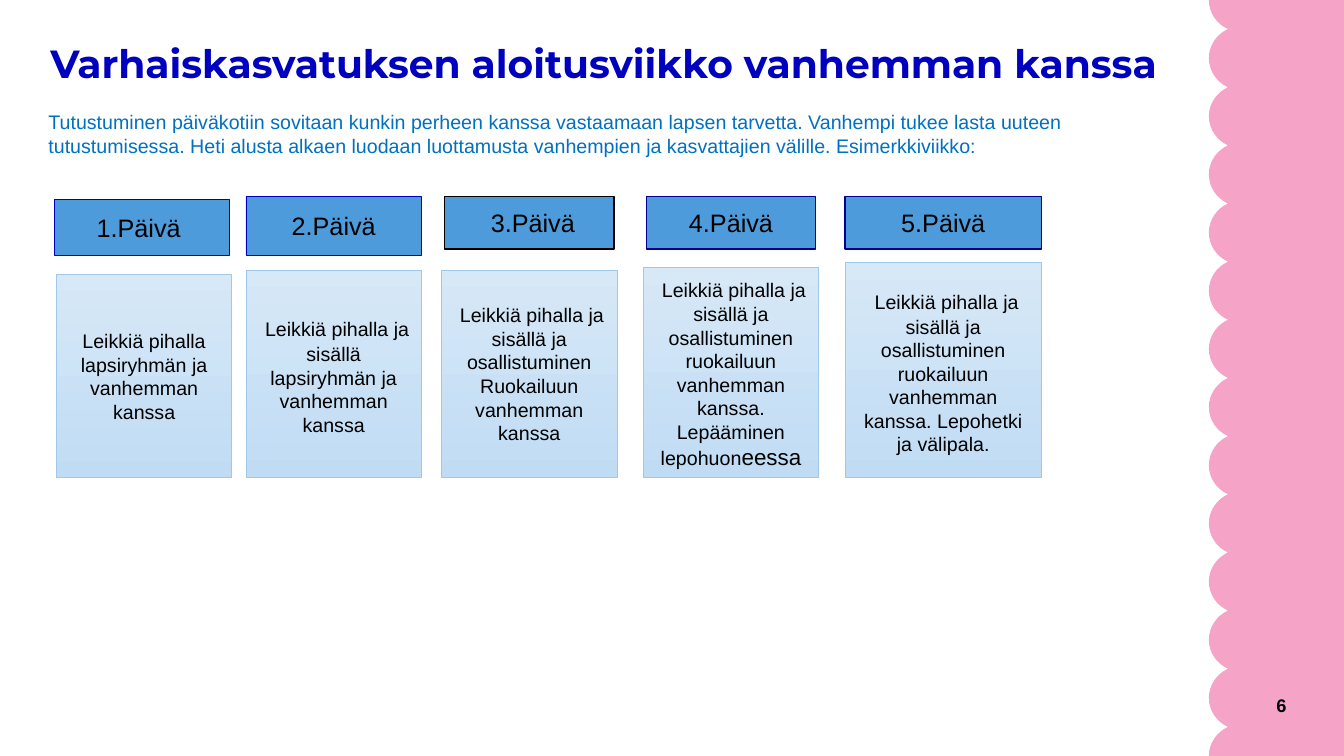
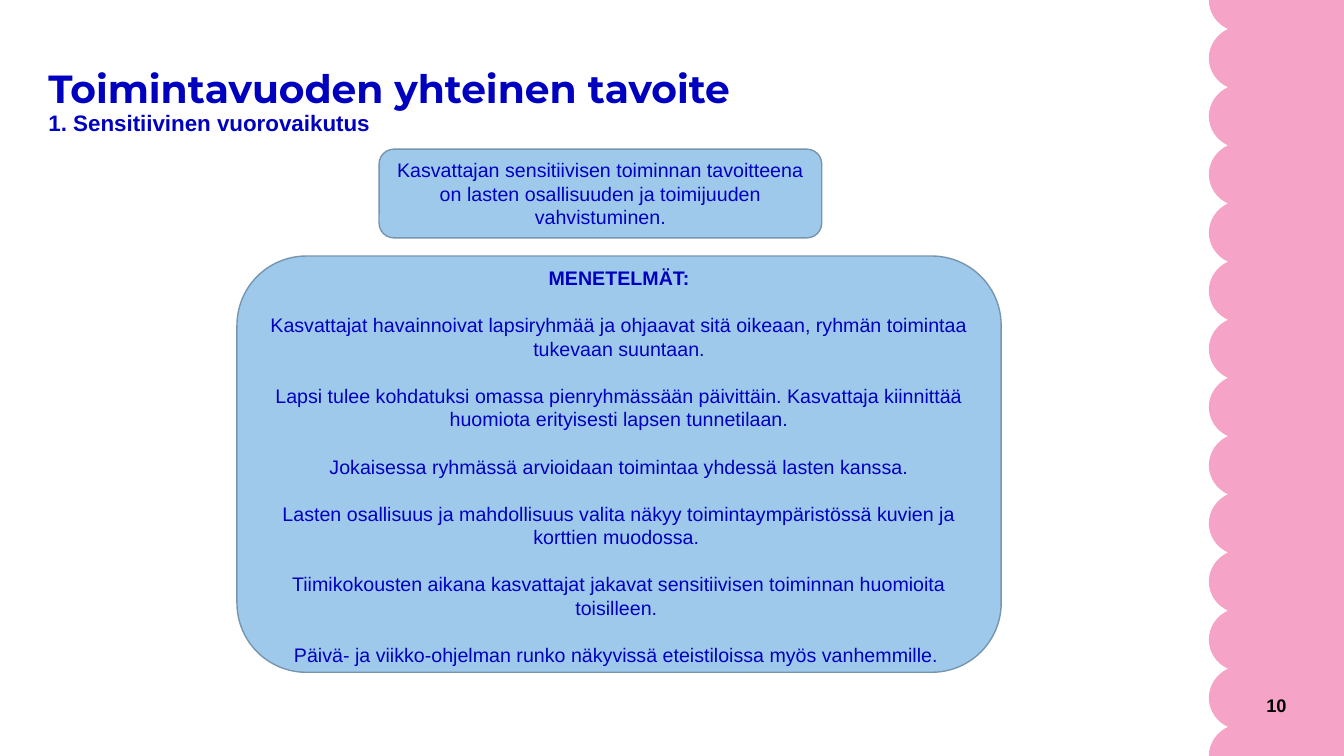
from lxml import etree
from pptx import Presentation
from pptx.dml.color import RGBColor
from pptx.enum.shapes import MSO_SHAPE
from pptx.enum.text import MSO_ANCHOR, MSO_AUTO_SIZE, PP_ALIGN
from pptx.oxml.ns import qn
from pptx.util import Inches, Pt

PINK, NAVY, BLUE = "F5A4C7", "0000BF", "0070C0"
DAY_BLUE, PALE_BLUE, BLACK = "4D9BDA", "9FC9EB", "000000"
TITLE = dict(name="Montserrat", size=Pt(28), bold=True)
BODY = dict(name="Arial", size=Pt(14), bold=False)
BODY_16 = dict(BODY, size=Pt(16))
BODY_18 = dict(BODY, size=Pt(18))
NO_INSETS = dict(margin_left=0, margin_top=0, margin_right=0, margin_bottom=0)


def rgb(value):
    return RGBColor.from_string(value)


def write(sp, paragraphs, color, align=PP_ALIGN.CENTER, anchor=MSO_ANCHOR.MIDDLE,
          gap=0, spacing=1.0, frame={}):
    """Fill a shape with paragraphs, each a list of (text, font format) runs."""
    tf = sp.text_frame
    for name, value in dict(word_wrap=True, auto_size=MSO_AUTO_SIZE.NONE,
                            vertical_anchor=anchor, **frame).items():
        setattr(tf, name, value)
    for i, runs in enumerate(paragraphs):
        p = tf.add_paragraph() if i else tf.paragraphs[0]
        p.alignment, p.line_spacing = align, spacing
        p.space_before = Pt(gap if i else 0)
        for text, font in runs:
            if text == "\v":
                p.add_line_break()
                continue
            r = p.add_run()
            r.text = text
            r.font.color.rgb = rgb(color)
            for name, value in font.items():
                setattr(r.font, name, value)


prs = Presentation()
prs.slide_width, prs.slide_height = Inches(13.33), Inches(7.5)

# Slides with their titles and page numbers
pages = [
    (1, "6", (0.5, 0.44, 12.29, 0.86),
     [("Varhaiskasvatuksen aloitusviikko vanhemman kanssa", TITLE)]),
    (5, "10", (0.48, 0.69, 12.29, 0.46),
     [("Toimintavuoden yhteinen tavoite", TITLE), ("\v", {}),
      ("1. Sensitiivinen vuorovaikutus", dict(BODY_16, bold=True))]),
]
for layout, number, box, runs in pages:
    s = prs.slides.add_slide(prs.slide_layouts[layout])
    sp = s.shapes.title
    sp.left, sp.top, sp.width, sp.height = map(Inches, box)
    write(sp, [runs], NAVY, PP_ALIGN.LEFT, MSO_ANCHOR.TOP, spacing=0.9, frame=NO_INSETS)
    sp = s.shapes.add_textbox(*map(Inches, (11.41, 6.86, 1.35, 0.28)))
    write(sp, [[(number, dict(BODY, size=Pt(13), bold=True))]], BLACK,
          PP_ALIGN.RIGHT, frame=NO_INSETS)
week, goal = prs.slides

# Scalloped band: straight half scallops are bent into curves, then moved to the master
edge, notch, halves = 11.99, 12.18, 26
step = 7.5 / halves
corners = [(notch if i % 2 else edge, i * step) for i in range(halves + 1)]
outline = [(Inches(x), Inches(y)) for x, y in corners]
outline += [(prs.slide_width, prs.slide_height), (prs.slide_width, 0)]
builder = week.shapes.build_freeform(*outline[0])
builder.add_line_segments(outline[1:], close=True)
band = builder.convert_to_shape()
outline_path = next(band.element.iter(qn("a:path")))
for i, line in enumerate(outline_path.findall(qn("a:lnTo"))[:halves]):
    top = i * step
    bend = [(edge, top + 0.13), (12.07, top + 0.24)]
    if i % 2:
        bend = [(12.07, top + 0.05), (edge, top + 0.16)]
    curve = etree.Element(qn("a:cubicBezTo"))
    for x, y in bend + [corners[i + 1]]:
        etree.SubElement(curve, qn("a:pt"), x=str(Inches(x) - Inches(edge)), y=str(Inches(y)))
    outline_path.replace(line, curve)
band.shadow.inherit = False
band.fill.solid()
band.fill.fore_color.rgb = rgb(PINK)
band.line.fill.background()
prs.slide_master.element.cSld.spTree.insert(2, band.element)

# First week: introduction
sp = week.placeholders[1]
sp.left, sp.top, sp.width, sp.height = map(Inches, (0.48, 1.09, 12.29, 5.67))
write(sp, [
    [("Tutustuminen päiväkotiin sovitaan kunkin perheen kanssa vastaamaan lapsen tarvetta. "
      "Vanhempi tukee lasta uuteen", BODY)],
    [("tutustumisessa. Heti alusta alkaen luodaan luottamusta vanhempien ja kasvattajien "
      "välille. Esimerkkiviikko:", BODY)]],
    BLUE, PP_ALIGN.LEFT, MSO_ANCHOR.TOP, frame=NO_INSETS)
for p in sp.text_frame.paragraphs:
    pPr = p._p.get_or_add_pPr()
    pPr.set("marL", "0")
    pPr.set("indent", "0")
    etree.SubElement(pPr, qn("a:buNone"))

# First week: a heading and a card for each day
days = [
    ("1.Päivä ", (0.54, 1.98, 1.74, 0.55), NAVY, 0.5, (0.56, 2.72, 1.74),
     [[("Leikkiä pihalla lapsiryhmän ja vanhemman kanssa", BODY)]]),
    ("2.Päivä", (2.44, 1.95, 1.74, 0.58), NAVY, 0.5, (2.44, 2.68, 1.74),
     [[(" ", BODY_18),
       ("Leikkiä pihalla ja sisällä lapsiryhmän ja vanhemman kanssa", BODY)]]),
    (" 3.Päivä", (4.41, 1.95, 1.68, 0.52), BLACK, 1, (4.38, 2.68, 1.74),
     [[(" Leikkiä pihalla ja sisällä ja osallistuminen", BODY)],
      [("Ruokailuun vanhemman kanssa", BODY)]]),
    ("4.Päivä", (6.41, 1.95, 1.68, 0.52), "00008D", 1, (6.38, 2.65, 1.74),
     [[(" ", BODY_16),
       ("Leikkiä pihalla ja sisällä ja osallistuminen ruokailuun vanhemman kanssa. "
        "Lepääminen lepohuon", BODY), ("eessa", BODY_16)]]),
    ("5.Päivä", (8.38, 1.95, 1.95, 0.52), "00008D", 1, (8.38, 2.6, 1.95),
     [[(" ", BODY_18),
       ("Leikkiä pihalla ja sisällä ja osallistuminen ruokailuun vanhemman kanssa. "
        "Lepohetki ja välipala.", BODY)]]),
]
cards_bottom = 4.74
for day, box, line, weight, (left, top, width), activity in days:
    heading = week.shapes.add_shape(MSO_SHAPE.RECTANGLE, *map(Inches, box))
    heading.fill.solid()
    heading.fill.fore_color.rgb = rgb(DAY_BLUE)
    write(heading, [[(day, BODY_18)]], BLACK)

    card = week.shapes.add_shape(
        MSO_SHAPE.RECTANGLE, *map(Inches, (left, top, width, cards_bottom - top)))
    card.fill.gradient()
    card.fill.gradient_angle = 270
    for stop, color in zip(card.fill.gradient_stops, ("D7E8F7", "C0DCF4")):
        stop.color.rgb = rgb(color)
    write(card, activity, BLACK)

    for sp, color, points in ((heading, line, weight), (card, PALE_BLUE, 0.5)):
        sp.shadow.inherit = False
        sp.line.color.rgb = rgb(color)
        sp.line.width = Pt(points)

# Goal of the year: methods and aim
methods = [
    "Kasvattajat havainnoivat lapsiryhmää ja ohjaavat sitä oikeaan, ryhmän toimintaa "
    "tukevaan suuntaan.",
    "Lapsi tulee kohdatuksi omassa pienryhmässään päivittäin. Kasvattaja kiinnittää "
    "huomiota erityisesti lapsen tunnetilaan.",
    "Jokaisessa ryhmässä arvioidaan toimintaa yhdessä lasten kanssa.",
    "Lasten osallisuus ja mahdollisuus valita näkyy toimintaympäristössä kuvien ja "
    "korttien muodossa. ",
    "Tiimikokousten aikana kasvattajat jakavat sensitiivisen toiminnan huomioita toisilleen. ",
    "Päivä- ja viikko-ohjelman runko näkyvissä eteistiloissa myös vanhemmille. ",
]
aim = ("Kasvattajan sensitiivisen toiminnan tavoitteena on lasten osallisuuden ja "
       "toimijuuden vahvistuminen.")
panels = [
    ((2.35, 2.54, 7.58, 4.13), 0.09,
     [[("MENETELMÄT:", dict(BODY, bold=True))]] + [[(text, BODY)] for text in methods]),
    ((3.76, 1.48, 4.39, 0.88), 0.05, [[(aim, BODY)]]),
]
for box, inset, paragraphs in panels:
    sp = goal.shapes.add_shape(MSO_SHAPE.ROUNDED_RECTANGLE, *map(Inches, box))
    sp.shadow.inherit = False
    sp.fill.solid()
    sp.fill.fore_color.rgb = rgb(PALE_BLUE)
    sp.line.color.rgb = rgb("7695AE")
    sp.line.width = Pt(1)
    write(sp, paragraphs, NAVY, gap=16.8, frame=dict(margin_top=Inches(inset)))

prs.save("out.pptx")
